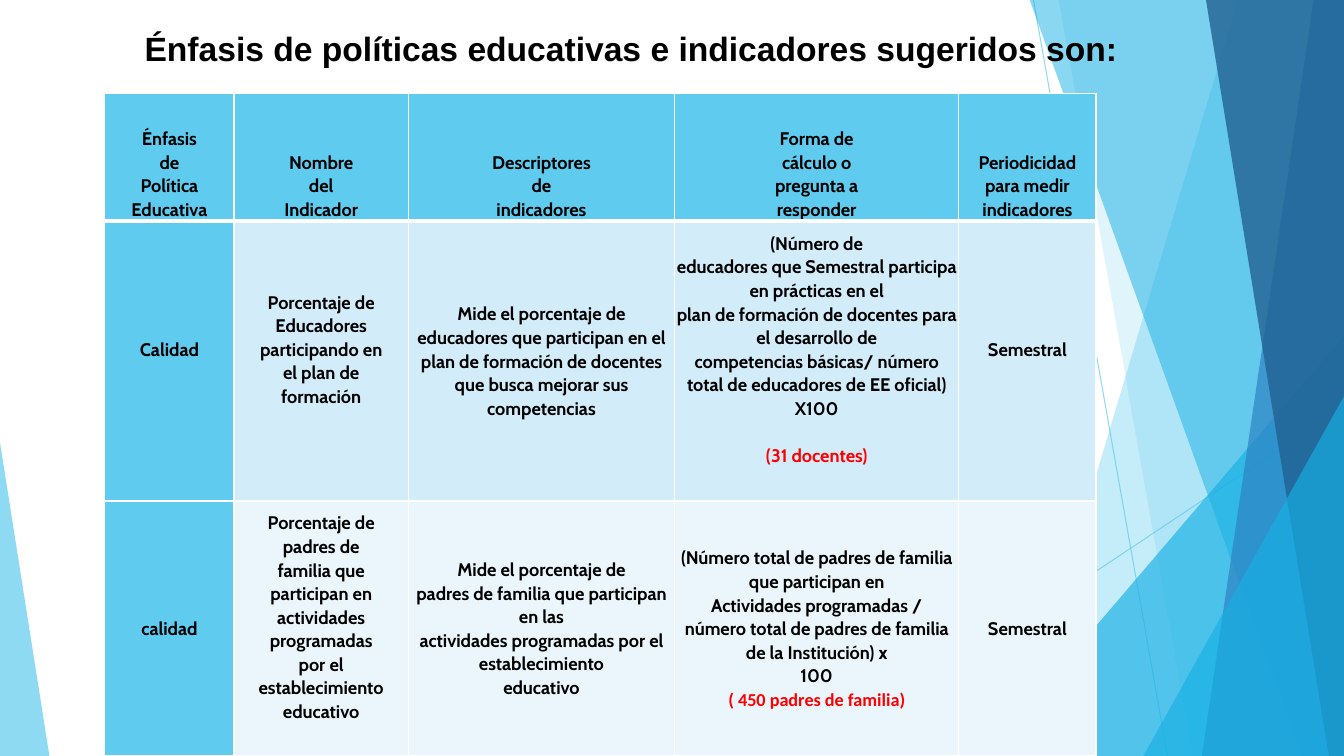
from pptx import Presentation
from pptx.dml.color import RGBColor as RGB
from pptx.enum.shapes import MSO_CONNECTOR as Conn, MSO_SHAPE as Kind
from pptx.enum.text import MSO_ANCHOR as Anchor, PP_ALIGN as Align
from pptx.oxml.ns import qn
from pptx.util import Inches, Pt
from lxml.etree import SubElement as Sub

COLORS = {
    "sky": "5FCBEF", "cyan": "17B0E4", "blue": "2E83C3", "navy": "226292",
    "pale": "D2ECF9", "mist": "EAF6FC", "white": "FFFFFF",
    "black": "000000", "red": "FF0000",
}
WIDE, HIGH = 13.33, 7.5
LINE = 0.23  # height of one line of table text

RAYS = [(10.25, 0, 11.58, HIGH), (WIDE, 4.03, 8.12, HIGH)]
# Each band runs from its top left x to its bottom left x, out to the right edge.
BACK = [(12.28, 10.04, "sky", 36), (10.5, 11.83, "sky", 20)]
FRONT = [(10.21, 12.91, "cyan", 50), (13.03, 11.92, "blue", 70),
         (11.96, 13.18, "navy", 80)]
WEDGE = (9.77, 3.33, 3.56, 4.17, 1, "cyan", 66)
CORNERS = [(11.34, 3.93, 1.99, 3.57, 1, "cyan", 66),
           (0, 4.39, 0.49, 3.11, 0, "sky", 70)]

COLS = [1.28, 1.73, 2.64, 2.82, 1.36]
ROWS = [1.26, 2.78, 2.53]
FILLS = ["sky", "pale", "mist"]
HEAD = [
    "Énfasis\nde\nPolítica\nEducativa",
    "Nombre\ndel\nIndicador",
    "Descriptores\nde\nindicadores",
    "Forma de\ncálculo o\npregunta a\nresponder",
    "Periodicidad\npara medir\nindicadores",
]
TEACH = [
    "Calidad",
    "Porcentaje de\nEducadores participando en\nel plan de\nformación",
    "Mide el porcentaje de\neducadores que participan en el plan de formación "
    "de docentes que busca mejorar sus competencias",
    "(Número de\neducadores que Semestral participa en prácticas en el\n"
    "plan de formación de docentes para el desarrollo de\n"
    "competencias básicas/ número total de educadores de EE oficial) X100",
    "Semestral",
]
FAMILY = [
    "calidad",
    "Porcentaje de\npadres de\nfamilia que\nparticipan en\nactividades\n"
    "programadas\npor el\nestablecimiento\neducativo",
    "Mide el porcentaje de\npadres de familia que participan en las\n"
    "actividades programadas por el establecimiento\neducativo",
    "(Número total de padres de familia que participan en\n"
    "Actividades programadas /\n"
    "número total de padres de familia de la Institución) x\n100",
    "Semestral",
]
# Red closing lines by cell: text, font, points above
NOTES = {(1, 3): ("(31 docentes)", "Cabin", 17),
         (2, 3): ("( 450 padres de familia)", "Calibri", 0)}
# Cells whose text sits half a line above the middle
RAISED = {(1, 0), (1, 1), (1, 3), (1, 4), (2, 1)}


class Deck:
    def __init__(self, slide):
        self.shapes = slide.shapes

    def color(self, name):
        return RGB.from_string(COLORS[name])

    def fade(self, shape, alpha):
        """Set the opacity, in percent, of the shape's colours."""
        for tint in shape._element.spPr.iter(qn("a:srgbClr")):
            Sub(tint, qn("a:alpha"), val=str(alpha * 1000))

    def paint(self, shape, name, alpha):
        shape.shadow.inherit = False
        shape.fill.solid()
        shape.fill.fore_color.rgb = self.color(name)
        shape.line.fill.background()
        self.fade(shape, alpha)

    def ray(self, *ends):
        line = self.shapes.add_connector(Conn.STRAIGHT, *map(Inches, ends))
        line.line.color.rgb = self.color("sky")
        line.line.width = Pt(0.75)
        self.fade(line, 70)
        Sub(line._element.spPr, qn("a:effectLst"))

    def band(self, top, base, name, alpha):
        pen = self.shapes.build_freeform(Inches(top), Inches(-0.01))
        spots = [(WIDE, -0.01), (WIDE, HIGH), (base, HIGH)]
        pen.add_line_segments([(Inches(x), Inches(y)) for x, y in spots])
        self.paint(pen.convert_to_shape(), name, alpha)

    def wedge(self, x, y, w, h, peak, name, alpha):
        shape = self.shapes.add_shape(Kind.ISOSCELES_TRIANGLE,
                                      *map(Inches, (x, y, w, h)))
        shape.adjustments[0] = peak
        self.paint(shape, name, alpha)

    def text(self, para, words, size, font, name="black"):
        para.alignment = Align.CENTER
        run = para.add_run()
        run.text = words
        run.font.size = Pt(size)
        run.font.name = font
        run.font.bold = True
        run.font.color.rgb = self.color(name)

    def title(self, words, x, y, w, h):
        box = self.shapes.add_textbox(*map(Inches, (x, y, w, h)))
        box.text_frame.word_wrap = True
        self.text(box.text_frame.paragraphs[0], words, 24, "Arial")

    def edges(self, cell, top, base):
        """Draw white borders, with the top and bottom widths in points."""
        props = cell._tc.get_or_add_tcPr()
        for side, width in zip("LRTB", (1, 1, top, base)):
            line = Sub(props, qn("a:ln" + side), w=str(Pt(width)))
            fill = Sub(line, qn("a:solidFill"))
            Sub(fill, qn("a:srgbClr"), val=COLORS["white"])

    def cell(self, cell, words, row, col):
        self.edges(cell, 3 if row == 1 else 1, 3 if row == 0 else 1)
        cell.fill.solid()
        cell.fill.fore_color.rgb = self.color(FILLS[row] if col else "sky")
        cell.vertical_anchor = Anchor.MIDDLE if row else Anchor.BOTTOM
        cell.margin_left = cell.margin_right = Inches(0.02)
        cell.margin_top = 0
        cell.margin_bottom = Inches(LINE if (row, col) in RAISED else 0)
        lines = [(part, "Cabin", 0, "black") for part in words.split("\n")]
        if (row, col) in NOTES:
            lines.append((*NOTES[row, col], "red"))
        frame = cell.text_frame
        for i, (part, font, gap, name) in enumerate(lines):
            para = frame.add_paragraph() if i else frame.paragraphs[0]
            para.line_spacing = 1.07
            para.space_before = Pt(gap)
            self.text(para, part, 13, font, name)

    def table(self, x, y, data):
        size = map(Inches, (x, y, sum(COLS), sum(ROWS)))
        grid = self.shapes.add_table(len(ROWS), len(COLS), *size).table
        grid.horz_banding = False
        for col, wide in zip(grid.columns, COLS):
            col.width = Inches(wide)
        for row, high in zip(grid.rows, ROWS):
            row.height = Inches(high)
        for r, texts in enumerate(data):
            for c, words in enumerate(texts):
                self.cell(grid.cell(r, c), words, r, c)


def main():
    prs = Presentation()
    prs.slide_width, prs.slide_height = Inches(WIDE), Inches(HIGH)
    deck = Deck(prs.slides.add_slide(prs.slide_layouts[6]))
    for ends in RAYS:
        deck.ray(*ends)
    for band in BACK:
        deck.band(*band)
    deck.wedge(*WEDGE)
    for band in FRONT:
        deck.band(*band)
    for corner in CORNERS:
        deck.wedge(*corner)
    deck.table(1.04, 0.93, [HEAD, TEACH, FAMILY])
    deck.title("Énfasis de políticas educativas e indicadores sugeridos son:",
               0.46, 0.23, 11.6, 0.5)
    prs.save("out.pptx")


if __name__ == "__main__":
    main()
